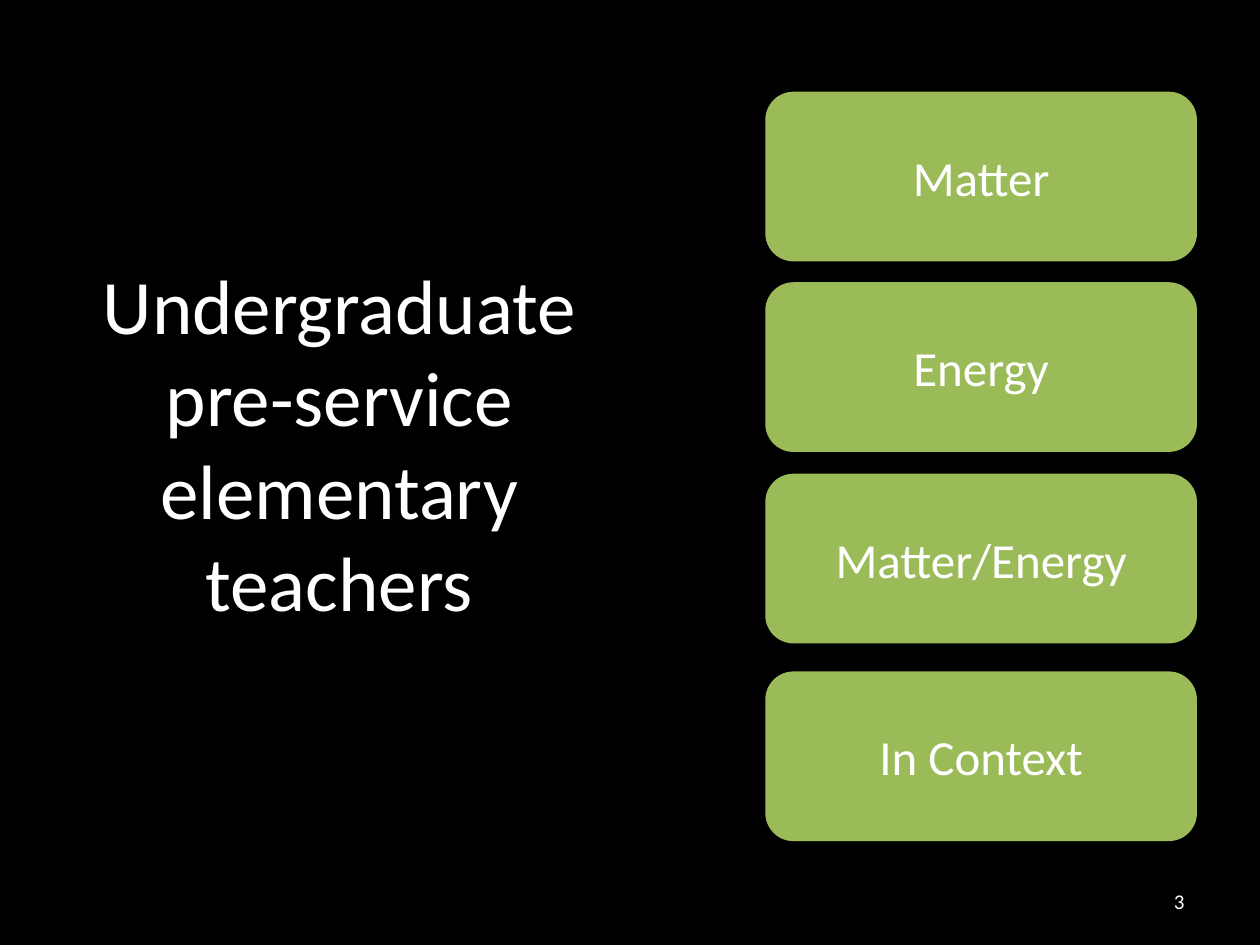
"""Build the slide on topics for pre-service elementary teachers."""
from pptx import Presentation
from pptx.dml.color import RGBColor
from pptx.enum.shapes import MSO_SHAPE
from pptx.enum.text import MSO_ANCHOR, PP_ALIGN
from pptx.util import Pt

ROUNDED = MSO_SHAPE.ROUNDED_RECTANGLE
MIDDLE = MSO_ANCHOR.MIDDLE
CENTER, RIGHT = PP_ALIGN.CENTER, PP_ALIGN.RIGHT
COLORS = {"background": "000000", "text": "FFFFFF", "topic": "9BBB59"}
TOPICS = [
    ("Matter", 52.4),
    ("Energy", 161.3),
    ("Matter/Energy", 270.7),
    ("In Context", 383.7),
]


def write_text(box, text, size, alignment):
    frame = box.text_frame
    for name, value in {"word_wrap": True, "vertical_anchor": MIDDLE}.items():
        setattr(frame, name, value)
    para = frame.paragraphs[0]
    para.alignment = alignment
    span = para.add_run()
    span.text = text
    for name, value in {"name": "Calibri", "size": Pt(size)}.items():
        setattr(span.font, name, value)
    span.font.color.rgb = RGBColor.from_string(COLORS["text"])


deck = Presentation()
deck.slide_width, deck.slide_height = Pt(720), Pt(540)
page = deck.slides.add_slide(deck.slide_layouts[6])
page.background.fill.solid()
page.background.fill.fore_color.rgb = RGBColor.from_string(COLORS["background"])

title = page.shapes.add_textbox(Pt(18), Pt(121.7), Pt(352), Pt(262))
write_text(title, "Undergraduate pre-service elementary teachers", 44, CENTER)

number = page.shapes.add_textbox(Pt(516), Pt(500.5), Pt(168), Pt(28.75))
write_text(number, "3", 12, RIGHT)

for topic, top in TOPICS:
    box = page.shapes.add_shape(ROUNDED, Pt(437.3), Pt(top), Pt(246.7), Pt(97))
    box.shadow.inherit = False
    box.fill.solid()
    box.fill.fore_color.rgb = RGBColor.from_string(COLORS["topic"])
    box.line.fill.background()
    write_text(box, topic, 28, CENTER)

deck.save("out.pptx")
